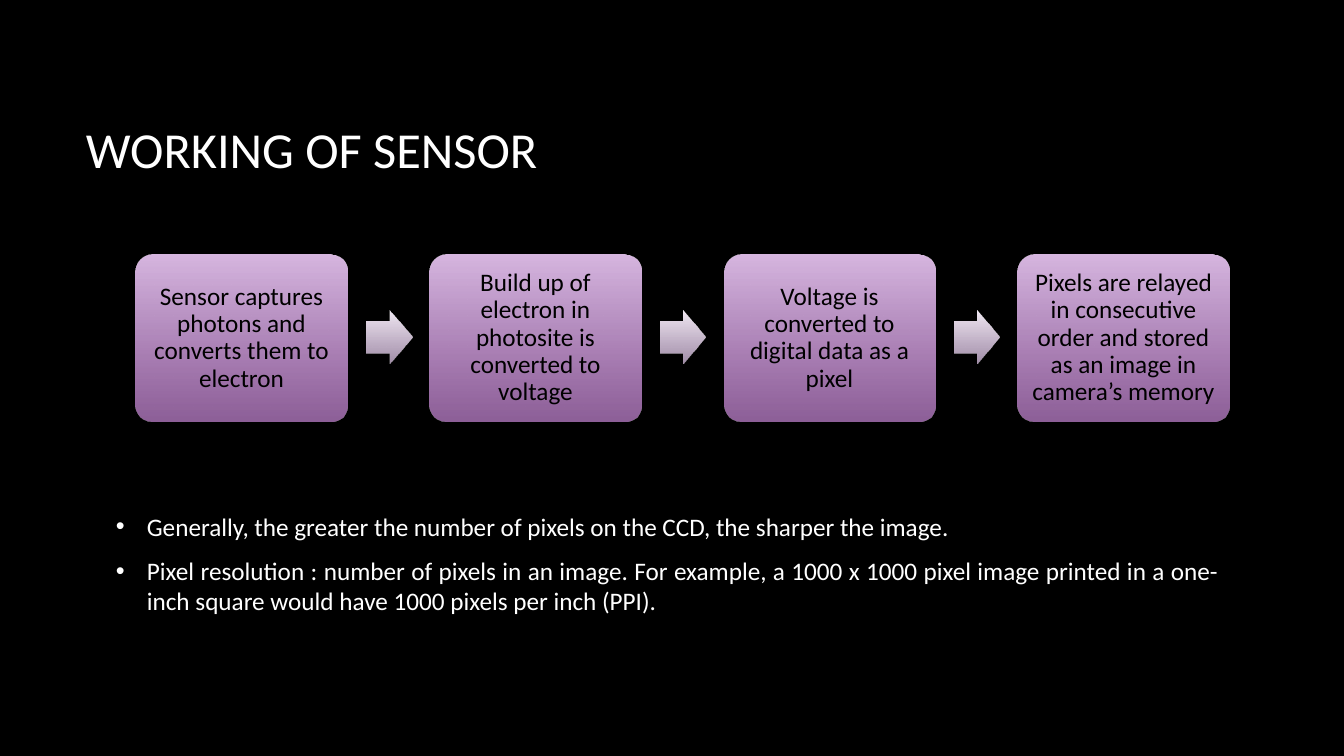
from lxml.etree import SubElement
from pptx import Presentation
from pptx.dml.color import RGBColor
from pptx.enum.shapes import MSO_SHAPE
from pptx.enum.text import MSO_ANCHOR, PP_ALIGN
from pptx.oxml.ns import qn
from pptx.util import Pt

SLIDE_WIDTH, SLIDE_HEIGHT = 1344, 756
EMU_PER_PX = 12192000 / SLIDE_WIDTH
FONT = "Calibri"

CARD_LEFT, CARD_TOP, CARD_WIDTH, CARD_HEIGHT = 136, 255, 211, 166
CARD_STEP = 294
ARROW_OFFSET, ARROW_WIDTH, ARROW_HEIGHT = 231, 45, 53
CARD_COLORS = ("D8B7E1", "BF82CE")
ARROW_COLORS = ("F2EAF5", "DBC1E3")

STEPS = [
    "Sensor captures photons and converts them to electron",
    "Build up of electron in photosite is converted to voltage",
    "Voltage is converted to digital data as a pixel",
    "Pixels are relayed in consecutive order and stored as an image in camera’s memory",
]
NOTES = [
    "Generally, the greater the number of pixels on the CCD, the sharper the image.",
    "Pixel resolution : number of pixels in an image. For example, a 1000 x 1000 pixel "
    "image printed in a one-inch square would have 1000 pixels per inch (PPI).",
]


def px(length):
    return round(length * EMU_PER_PX)


def color(hex_string):
    return RGBColor.from_string(hex_string)


def add_run(paragraph, text, size, hex_string):
    run = paragraph.add_run()
    run.text = text
    run.font.name = FONT
    run.font.size = Pt(size)
    run.font.color.rgb = color(hex_string)


def add_text_box(slide, left, top, width, height):
    box = slide.shapes.add_textbox(px(left), px(top), px(width), px(height))
    frame = box.text_frame
    frame.word_wrap = True
    frame.vertical_anchor = MSO_ANCHOR.MIDDLE
    return frame


def add_title(slide, text):
    frame = add_text_box(slide, 76, 68, 1117, 160)
    add_run(frame.paragraphs[0], text, 36, "FFFFFF")


def set_bullet(paragraph):
    properties = paragraph._p.get_or_add_pPr()
    properties.set("marL", str(px(31)))
    properties.set("indent", str(-px(31)))
    bullet_color = SubElement(properties, qn("a:buClr"))
    SubElement(bullet_color, qn("a:srgbClr"), val="FFFFFF")
    SubElement(properties, qn("a:buFont"), typeface="Arial")
    SubElement(properties, qn("a:buChar"), char="•")


def add_bullet_list(slide, items):
    frame = add_text_box(slide, 106, 420, 1123, 287)
    for index, item in enumerate(items):
        paragraph = frame.add_paragraph() if index else frame.paragraphs[0]
        set_bullet(paragraph)
        paragraph.alignment = PP_ALIGN.JUSTIFY
        paragraph.space_after = Pt(10)
        add_run(paragraph, item, 18, "FFFFFF")


def add_gradient_shape(slide, kind, left, top, width, height, colors, adjustments):
    """Add a preset shape that fades downward to a 74 % opaque second colour."""
    shape = slide.shapes.add_shape(kind, px(left), px(top), px(width), px(height))
    for index, value in enumerate(adjustments):
        shape.adjustments[index] = value
    shape.shadow.inherit = False
    shape.line.fill.background()
    shape.fill.gradient()
    shape.fill.gradient_angle = 270
    for stop, position, hex_string in zip(shape.fill.gradient_stops, (0, 1), colors):
        stop.position = position
        stop.color.rgb = color(hex_string)
    last_color = shape._element.spPr.findall(".//" + qn("a:srgbClr"))[-1]
    SubElement(last_color, qn("a:alpha"), val="74000")
    return shape


def add_step_card(slide, left, text):
    card = add_gradient_shape(slide, MSO_SHAPE.ROUNDED_RECTANGLE, left, CARD_TOP,
                              CARD_WIDTH, CARD_HEIGHT, CARD_COLORS, [0.1])
    frame = card.text_frame
    frame.word_wrap = True
    frame.vertical_anchor = MSO_ANCHOR.MIDDLE
    frame.margin_left = frame.margin_right = px(7)
    frame.margin_top = frame.margin_bottom = px(7)
    paragraph = frame.paragraphs[0]
    paragraph.alignment = PP_ALIGN.CENTER
    paragraph.line_spacing = 0.9
    add_run(paragraph, text, 18, "000000")


def add_process(slide, steps):
    arrow_top = CARD_TOP + (CARD_HEIGHT - ARROW_HEIGHT) // 2
    for index, text in enumerate(steps):
        left = CARD_LEFT + index * CARD_STEP
        add_step_card(slide, left, text)
        if index < len(steps) - 1:
            add_gradient_shape(slide, MSO_SHAPE.RIGHT_ARROW, left + ARROW_OFFSET, arrow_top,
                               ARROW_WIDTH, ARROW_HEIGHT, ARROW_COLORS, [0.6, 0.5])


def main():
    presentation = Presentation()
    presentation.slide_width = px(SLIDE_WIDTH)
    presentation.slide_height = px(SLIDE_HEIGHT)
    slide = presentation.slides.add_slide(presentation.slide_layouts[6])
    slide.background.fill.solid()
    slide.background.fill.fore_color.rgb = color("000000")
    add_title(slide, "WORKING OF SENSOR")
    add_bullet_list(slide, NOTES)
    add_process(slide, STEPS)
    presentation.save("out.pptx")


if __name__ == "__main__":
    main()
